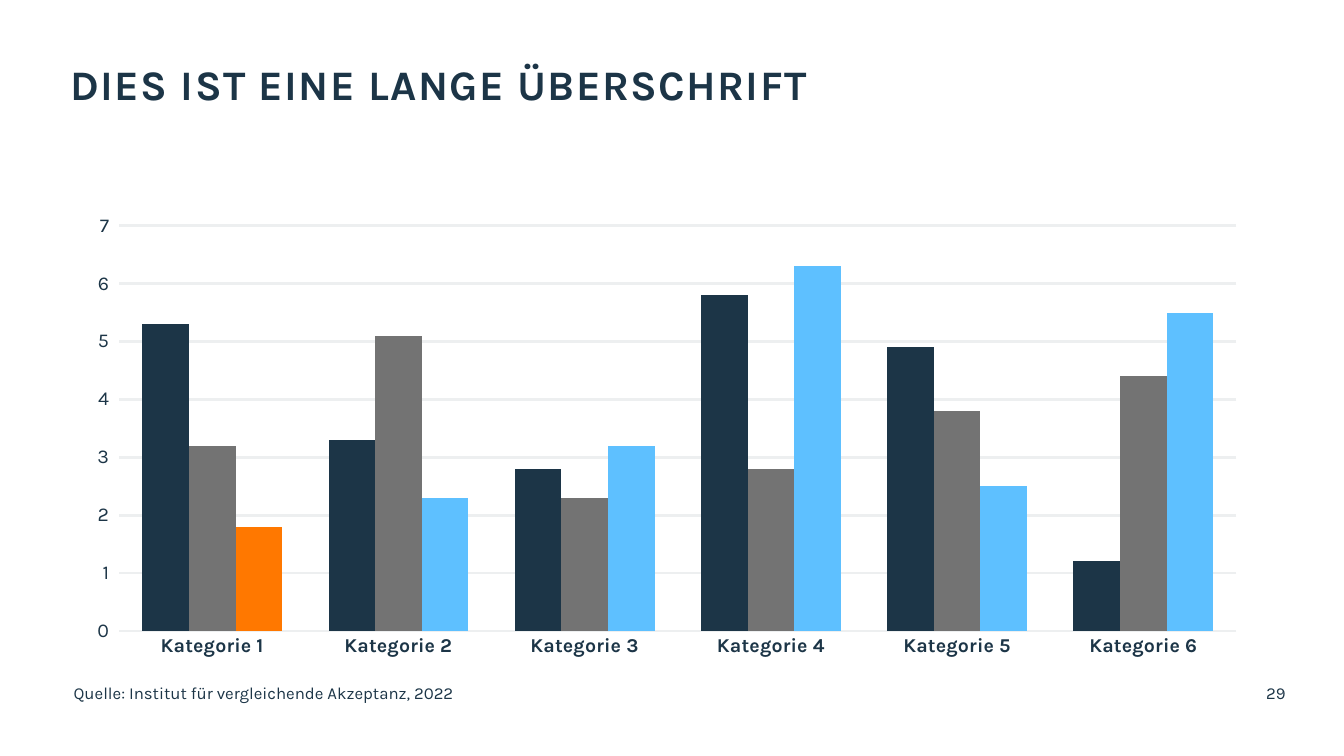
from lxml.etree import SubElement
from pptx import Presentation
from pptx.chart.data import CategoryChartData as ChartData
from pptx.dml.color import RGBColor as RGB
from pptx.enum.chart import XL_CHART_TYPE as Kind, XL_TICK_MARK as Tick
from pptx.enum.text import MSO_ANCHOR as Anchor, MSO_AUTO_SIZE as Fit, PP_ALIGN as Align
from pptx.oxml.ns import qn
from pptx.util import Inches, Pt

NAVY, GREY, BLUE, ORANGE, PALE = "1C3547", "737373", "5EC0FF", "FF7800", "EDEFF0"
FACE = "Karla"
SERIES = [
    ("Series 1", NAVY, (5.3, 3.3, 2.8, 5.8, 4.9, 1.2)),
    ("Series 2", GREY, (3.2, 5.1, 2.3, 2.8, 3.8, 4.4)),
    ("Series 3", BLUE, (1.8, 2.3, 3.2, 6.3, 2.5, 5.5)),
]


def paint(fill, tone):
    """Fill with a solid hex colour."""
    fill.solid()
    fill.fore_color.rgb = RGB.from_string(tone)


def style(font, size, bold=False, tone=NAVY):
    """Format a font."""
    font.name, font.size, font.bold = FACE, Pt(size), bold
    font.color.rgb = RGB.from_string(tone)


def write(shape, text, size=12, bold=False, align=Align.LEFT, space=None, gap=0):
    """Put formatted text into a shape."""
    frame = shape.text_frame
    frame.word_wrap, frame.auto_size = True, Fit.NONE
    frame.vertical_anchor = Anchor.TOP
    frame.margin_left = frame.margin_right = 0
    frame.margin_top = frame.margin_bottom = 0
    para = frame.paragraphs[0]
    para.alignment, para.line_spacing = align, space
    run = para.add_run()
    run.text = text
    style(run.font, size, bold)
    if gap:
        run.font._element.set("spc", str(gap * 100))


def head(slide, left, top, width, height):
    """Place the title."""
    title = slide.shapes.title
    title.left, title.top = Inches(left), Inches(top)
    title.width, title.height = Inches(width), Inches(height)
    write(title, "DIES IST EINE LANGE ÜBERSCHRIFT", size=30, bold=True, space=0.85, gap=1)


def foot(slide, left, top, width, height):
    """Place the source line and the page number."""
    side = 2.15
    parts = [
        (left, 8.2, "Quelle: Institut für vergleichende Akzeptanz, 2022", Align.LEFT),
        (left + width - side, side, "29", Align.RIGHT),
    ]
    for start, span, text, align in parts:
        box = slide.shapes.add_textbox(
            Inches(start), Inches(top), Inches(span), Inches(height))
        write(box, text, align=align)


def inset(chart, **ratios):
    """Fix the inner plot area as shares of the chart."""
    area = chart._chartSpace.find(".//" + qn("c:plotArea"))
    for old in area.findall(qn("c:layout")):
        area.remove(old)
    layout = SubElement(area, qn("c:layout"))
    area.insert(0, layout)
    manual = SubElement(layout, qn("c:manualLayout"))
    rules = {"layoutTarget": "inner", "xMode": "edge", "yMode": "edge", **ratios}
    for key, value in rules.items():
        SubElement(manual, qn("c:" + key)).set("val", str(value))


def bars(slide, left, top, width, height):
    """Place the column chart."""
    data = ChartData()
    data.categories = [f"Kategorie {n}" for n in range(1, 7)]
    for name, _, values in SERIES:
        data.add_series(name, values)
    chart = slide.shapes.add_chart(
        Kind.COLUMN_CLUSTERED, Inches(left), Inches(top),
        Inches(width), Inches(height), data).chart
    chart.has_legend = chart.has_title = False
    style(chart.font, 10)
    plot = chart.plots[0]
    plot.gap_width, plot.overlap, plot.vary_by_categories = 100, 0, False
    for series, (_, tone, _) in zip(plot.series, SERIES):
        paint(series.format.fill, tone)
        series.invert_if_negative = False
    paint(plot.series[2].points[0].format.fill, ORANGE)
    cat, val = chart.category_axis, chart.value_axis
    for axis, bold, tick in ((cat, True, Tick.NONE), (val, False, Tick.OUTSIDE)):
        style(axis.tick_labels.font, 14, bold)
        axis.format.line.fill.background()
        axis.major_tick_mark, axis.minor_tick_mark = tick, Tick.NONE
    val.minimum_scale, val.maximum_scale, val.major_unit = 0, 7, 1
    val.has_major_gridlines = True
    grid = val.major_gridlines.format.line
    grid.width = Pt(2)
    paint(grid.fill, PALE)
    inset(chart, x=0.04, y=0.05, w=0.94, h=0.87)


def main():
    """Build the slide."""
    deck = Presentation()
    deck.slide_width, deck.slide_height = Inches(13.33), Inches(7.5)
    slide = deck.slides.add_slide(deck.slide_layouts[5])
    paint(slide.background.fill, "FFFFFF")
    head(slide, 0.7, 0.66, 8.2, 1.12)
    bars(slide, 0.71, 2.01, 11.79, 4.62)
    foot(slide, 0.73, 6.77, 12.02, 0.4)
    deck.save("out.pptx")


if __name__ == "__main__":
    main()
